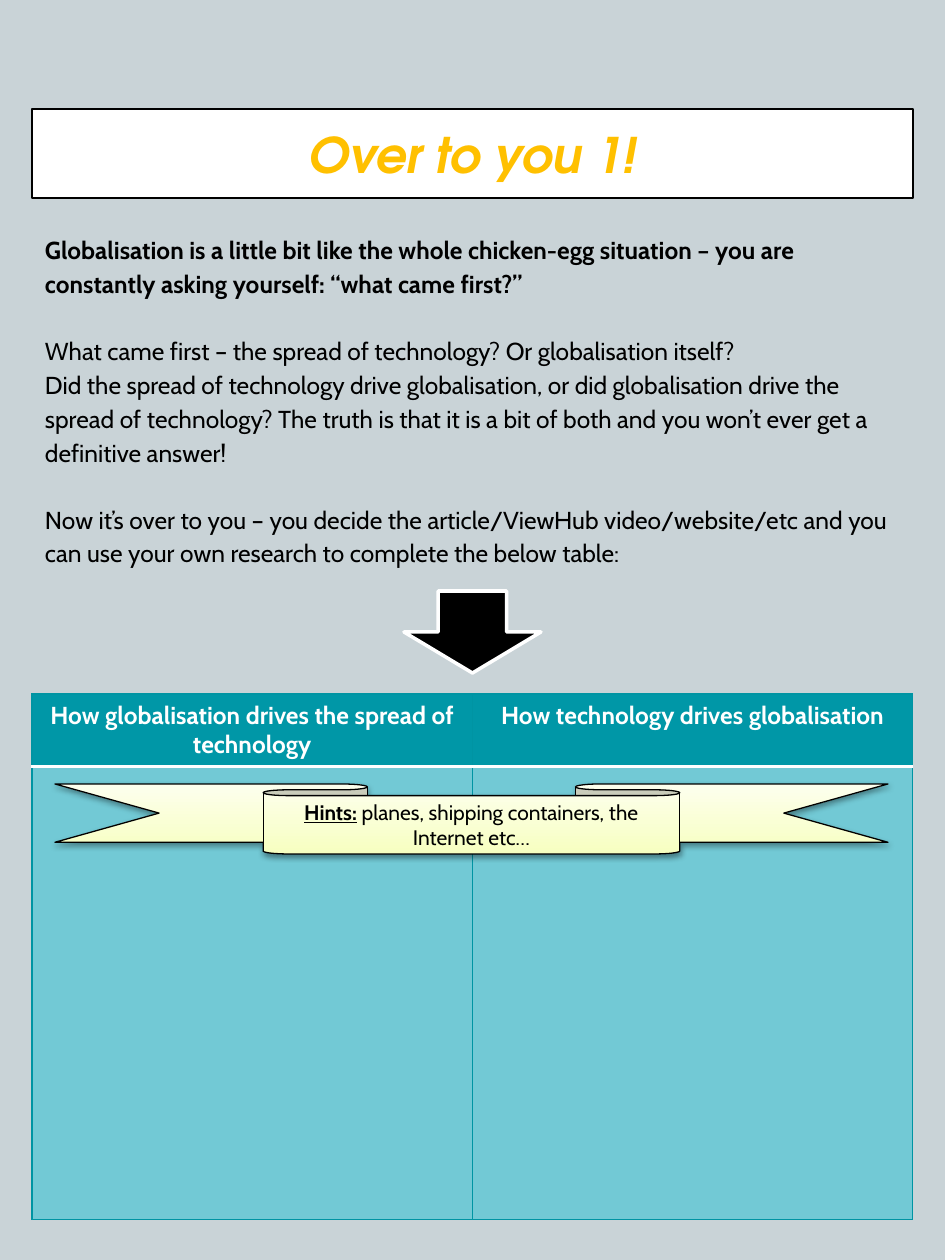
from lxml import etree
from pptx import Presentation
from pptx.dml.color import RGBColor
from pptx.enum.shapes import MSO_SHAPE
from pptx.enum.text import MSO_ANCHOR, MSO_AUTO_SIZE, PP_ALIGN
from pptx.oxml import parse_xml
from pptx.oxml.ns import nsdecls
from pptx.util import Emu, Pt

PIXEL = 914400 / 126
LEFT, CENTER = PP_ALIGN.LEFT, PP_ALIGN.CENTER
TOP, MIDDLE = MSO_ANCHOR.TOP, MSO_ANCHOR.MIDDLE
DOWN_ARROW, RIBBON = MSO_SHAPE.DOWN_ARROW, MSO_SHAPE.DOWN_RIBBON
NO_FIT = MSO_AUTO_SIZE.NONE
BODY_FONT, TITLE_FONT = "Cabin", "TeX Gyre Adventor"
COLORS = {
    "page": "C9D3D7", "black": "000000", "white": "FFFFFF", "gold": "FFC000",
    "header": "0097A7", "cell": "72C9D5", "border": "0094A3",
    "ribbon_low": "F7FFC0", "ribbon_high": "FDFFEE",
}


def px(length):
    return Emu(round(length * PIXEL))


def color(name):
    return RGBColor.from_string(COLORS[name])


def add_text(para, text, font=BODY_FONT, size=14, ink="black",
             bold=False, italic=False, underline=False):
    span = para.add_run()
    span.text = text
    span.font.name, span.font.size = font, Pt(size)
    span.font.color.rgb = color(ink)
    span.font.bold, span.font.italic = bold, italic
    span.font.underline = underline


class Worksheet:
    def __init__(self, deck):
        self.page = deck.slides.add_slide(deck.slide_layouts[5])
        self.page.background.fill.solid()
        self.page.background.fill.fore_color.rgb = color("page")

    def frame(self, box, anchor, inset):
        frame = box.text_frame
        frame.word_wrap, frame.auto_size = True, NO_FIT
        frame.vertical_anchor = anchor
        frame.margin_left = frame.margin_right = px(13)
        frame.margin_top = frame.margin_bottom = px(inset)
        return frame

    def paint(self, shape, fill, line, width):
        shape.fill.solid()
        shape.fill.fore_color.rgb = color(fill)
        shape.line.color.rgb = color(line)
        shape.line.width = Pt(width)

    def title(self, text, left, top, width, height):
        box = self.page.shapes.title
        box.left, box.top, box.width, box.height = map(px, (left, top, width, height))
        self.paint(box, "white", "black", 0.75)
        para = self.frame(box, MIDDLE, 13).paragraphs[0]
        para.alignment = CENTER
        add_text(para, text, font=TITLE_FONT, size=28, ink="gold", bold=True, italic=True)

    def passage(self, entries, left, top, width, height):
        box = self.page.shapes.add_textbox(*map(px, (left, top, width, height)))
        frame = self.frame(box, TOP, 13)
        for index, (text, bold, gap) in enumerate(entries):
            para = frame.add_paragraph() if index else frame.paragraphs[0]
            para.alignment, para.line_spacing = LEFT, 1.15
            para.space_before = Pt(gap)
            add_text(para, text, bold=bold)

    def shape(self, kind, left, top, width, height, fill, line, line_width):
        shape = self.page.shapes.add_shape(kind, *map(px, (left, top, width, height)))
        shape.shadow.inherit = False
        self.paint(shape, fill, line, line_width)
        return shape

    def ribbon(self, spans, left, top, width, height):
        ribbon = self.shape(RIBBON, left, top, width, height, "ribbon_low", "black", 0.75)
        ribbon.fill.gradient()
        ribbon.fill.gradient_angle = 90
        for stop, name, position in zip(ribbon.fill.gradient_stops,
                                        ("ribbon_low", "ribbon_high"), (0, 1)):
            stop.color.rgb, stop.position = color(name), position
        # Soft shadow below the ribbon
        effects = ribbon.element.spPr.find("{*}effectLst")
        effects.append(parse_xml(
            f'<a:outerShdw {nsdecls("a")} blurRad="{Pt(3.1)}" dist="{Pt(1.6)}" '
            f'dir="5400000" rotWithShape="0"><a:srgbClr val="{COLORS["black"]}">'
            '<a:alpha val="38000"/></a:srgbClr></a:outerShdw>'))
        para = self.frame(ribbon, MIDDLE, 6).paragraphs[0]
        para.alignment = CENTER
        for text, strong in spans:
            add_text(para, text, size=12, bold=strong, underline=strong)

    def borders(self, cell, **sides):
        properties = cell._tc.get_or_add_tcPr()
        for position, (side, (name, width)) in enumerate(sides.items()):
            line = parse_xml(f'<a:ln{side} {nsdecls("a")} w="{Pt(width)}"><a:solidFill>'
                             f'<a:srgbClr val="{COLORS[name]}"/></a:solidFill></a:ln{side}>')
            properties.insert(position, line)

    def table(self, headings, left, top, width, row_heights):
        graphic = self.page.shapes.add_table(
            len(row_heights), len(headings), *map(px, (left, top, width, sum(row_heights))))
        table = graphic.table
        thin, divider = ("border", 0.75), ("white", 2)
        for row, height in zip(table.rows, row_heights):
            row.height = px(height)
        for column, heading in enumerate(headings):
            para = table.cell(0, column).text_frame.paragraphs[0]
            para.alignment = CENTER
            add_text(para, heading, ink="white", bold=True)
            for row, fill in enumerate(("header", "cell")):
                cell = table.cell(row, column)
                cell.fill.solid()
                cell.fill.fore_color.rgb = color(fill)
                self.borders(cell, L=thin, R=thin, T=divider if row else thin,
                             B=thin if row else divider)


def main():
    deck = Presentation()
    deck.slide_width, deck.slide_height = px(945), px(1260)
    sheet = Worksheet(deck)
    left, width = 32, 881

    # Title and introduction
    sheet.title("Over to you 1!", left, 109, width, 89)
    sheet.passage([
        ("Globalisation is a little bit like the whole chicken-egg situation – you are "
         "constantly asking yourself: “what came first?”", True, 0),
        ("What came first – the spread of technology? Or globalisation itself?", False, 19),
        ("Did the spread of technology drive globalisation, or did globalisation drive the "
         "spread of technology? The truth is that it is a bit of both and you won’t ever "
         "get a definitive answer!", False, 0),
        ("Now it’s over to you – you decide the article/ViewHub video/website/etc and you "
         "can use your own research to complete the below table:", False, 19),
    ], left, 218, width, 837)

    # Arrow to the answer table
    sheet.shape(DOWN_ARROW, 404, 591, 137, 82, "black", "white", 2)
    sheet.table(["How globalisation drives the spread of technology",
                 "How technology drives globalisation"], left, 694, width, (72, 453))

    # Hint ribbon over the table
    sheet.ribbon([("Hints:", True), (" planes, shipping containers, the Internet etc…", False)],
                 55, 784, 833, 70)
    deck.save("out.pptx")


if __name__ == "__main__":
    main()
